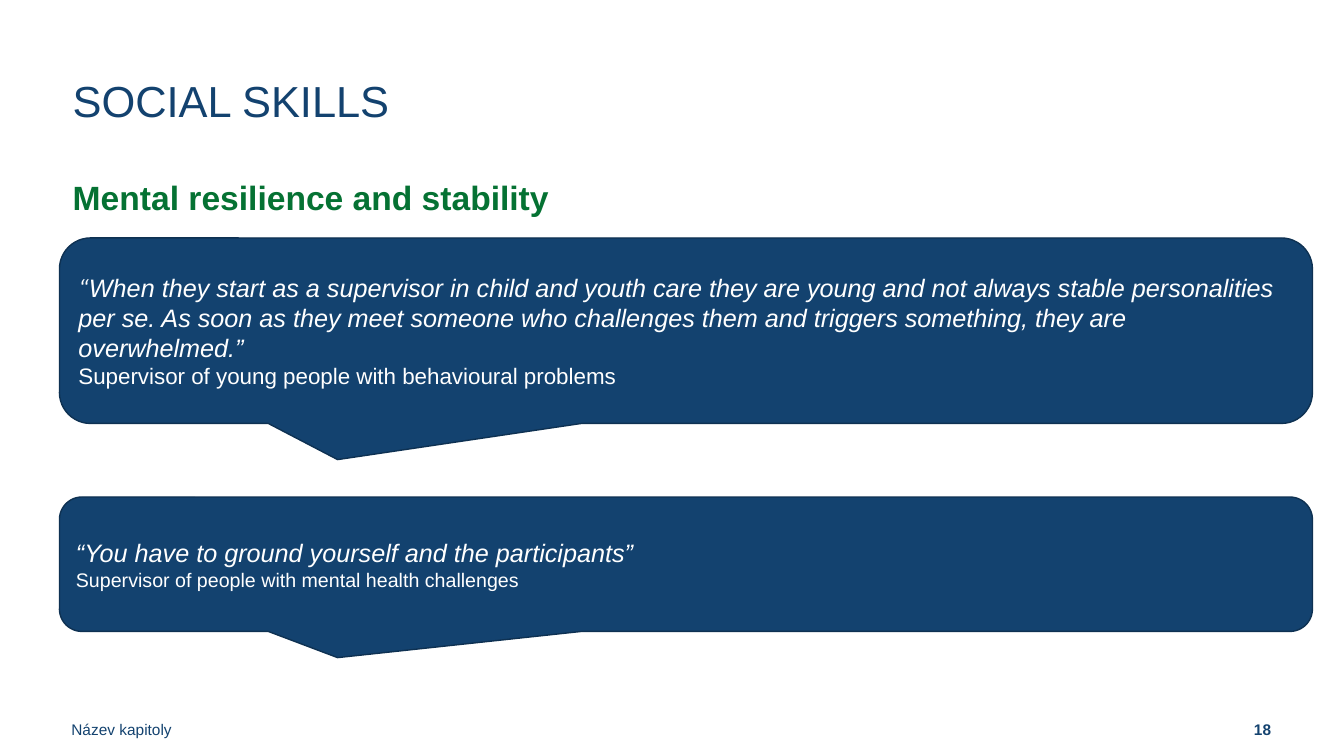
import dataclasses

import pptx
import pptx.dml.color
import pptx.enum.shapes
import pptx.enum.text
import pptx.util

Pt = pptx.util.Pt
ALIGN = pptx.enum.text.PP_ALIGN
ANCHOR = pptx.enum.text.MSO_ANCHOR


@dataclasses.dataclass(frozen=True)
class Theme:
    font: str = "Arial"
    quote_mark_font: str = "Calibri"
    navy: str = "13426F"
    outline: str = "0E3152"
    green: str = "057233"
    white: str = "FFFFFF"
    title: int = 31
    heading: int = 24
    quote: int = 18
    footer: int = 11


def rgb(value):
    return pptx.dml.color.RGBColor.from_string(value)


class Deck:
    def __init__(self, theme):
        self.theme = theme
        self.prs = pptx.Presentation()
        self.prs.slide_width, self.prs.slide_height = Pt(960), Pt(540)
        self.s = self.prs.slides.add_slide(self.prs.slide_layouts[6])

    def style(self, p, size, color, bold=False, italic=False):
        p.font.name = self.theme.font
        p.font.size = Pt(size)
        p.font.bold = bold
        p.font.italic = italic
        p.font.color.rgb = rgb(color)

    def text(self, box, text, size, color, spacing, insets=(0, 3.6, 7.2, 3.6),
             anchor=ANCHOR.TOP, align=ALIGN.LEFT, bold=False):
        tf = self.s.shapes.add_textbox(*map(Pt, box)).text_frame
        tf.word_wrap = True
        tf.vertical_anchor = anchor
        tf.margin_left, tf.margin_top, tf.margin_right, tf.margin_bottom = map(Pt, insets)
        p = tf.paragraphs[0]
        p.text = text
        p.alignment = align
        p.line_spacing = spacing
        self.style(p, size, color, bold)

    def footer(self, left, width, text, insets, **options):
        self.text((left, 496, width, 43.2), text, self.theme.footer, self.theme.navy,
                  Pt(13.3), insets, ANCHOR.BOTTOM, **options)

    def callout(self, top, height, quote, speaker, speaker_size, mark=""):
        t = self.theme
        sp = self.s.shapes.add_shape(
            pptx.enum.shapes.MSO_SHAPE.ROUNDED_RECTANGULAR_CALLOUT,
            Pt(42.5), Pt(top), Pt(895), Pt(height))
        for i, value in enumerate((-0.278, 0.695, 0.167)):
            sp.adjustments[i] = value
        sp.shadow.inherit = False
        sp.fill.solid()
        sp.fill.fore_color.rgb = rgb(t.navy)
        sp.line.color.rgb = rgb(t.outline)
        sp.line.width = Pt(1)
        tf = sp.text_frame
        tf.word_wrap = True
        tf.vertical_anchor = ANCHOR.MIDDLE
        p = tf.paragraphs[0]
        p.alignment = ALIGN.LEFT
        self.style(p, t.quote, t.white, italic=True)
        if mark:
            r = p.add_run()
            r.text = mark
            r.font.name = t.quote_mark_font
        p.add_run().text = quote
        p = tf.add_paragraph()
        p.text = speaker
        p.alignment = ALIGN.LEFT
        self.style(p, speaker_size, t.white)


def main():
    t = Theme()
    deck = Deck(t)
    deck.footer(0, 324, "Název kapitoly", (51, 3.6, 0, 11.5))
    deck.footer(743, 216, "18", (0, 3.6, 51, 11.5), align=ALIGN.RIGHT, bold=True)
    deck.text((52, 52.5, 895, 80.5), "SOCIAL SKILLS", t.title, t.navy, Pt(34))
    deck.text((52, 120.5, 895, 161), "Mental resilience and stability",
              t.heading, t.green, 1.07, bold=True)
    deck.callout(
        170, 132.5,
        "When they start as a supervisor in child and youth care they are young and not "
        "always stable personalities per se. As soon as they meet someone who challenges "
        "them and triggers something, they are overwhelmed.”",
        "Supervisor of young people with behavioural problems", 16, mark="“")
    deck.callout(
        355, 96, "“You have to ground yourself and the participants”",
        "Supervisor of people with mental health challenges", 14)
    deck.prs.save("out.pptx")


if __name__ == "__main__":
    main()
